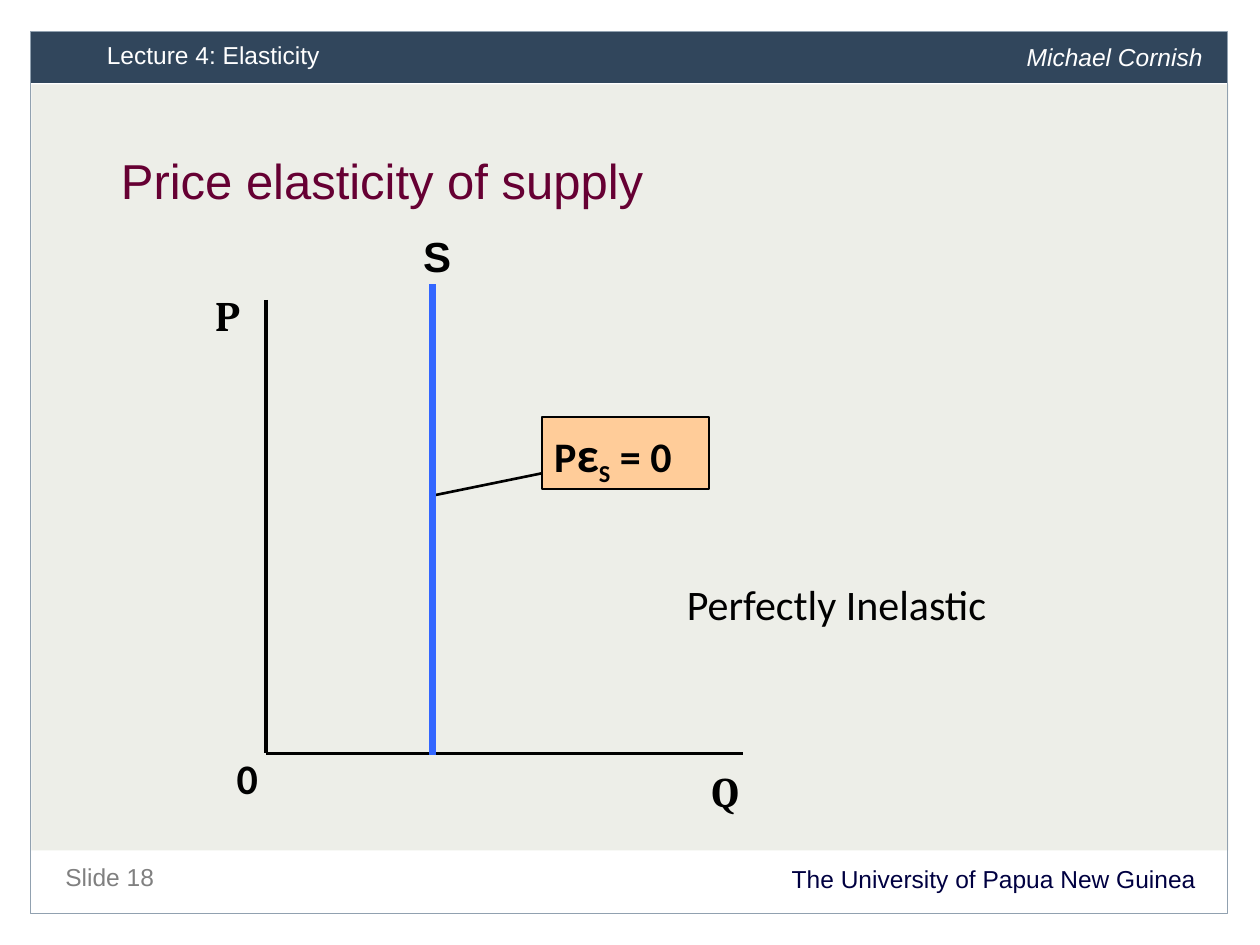
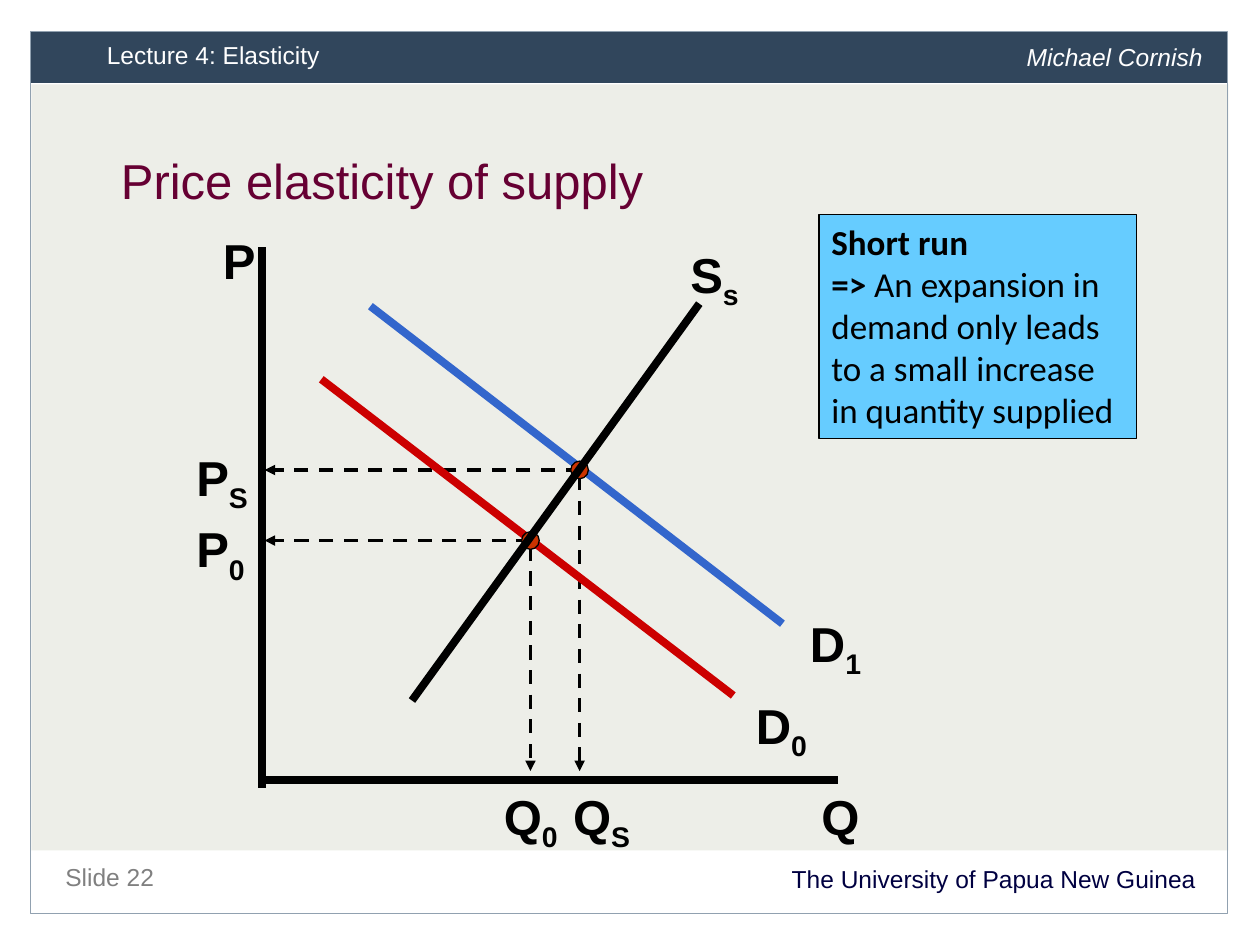
from lxml import etree
from pptx import Presentation
from pptx.dml.color import RGBColor
from pptx.enum.dml import MSO_LINE
from pptx.enum.shapes import MSO_CONNECTOR, MSO_SHAPE
from pptx.enum.text import MSO_ANCHOR, MSO_AUTO_SIZE, PP_ALIGN
from pptx.oxml.ns import qn
from pptx.util import Inches, Pt

BLACK = RGBColor(0x00, 0x00, 0x00)
WHITE = RGBColor(0xFF, 0xFF, 0xFF)
GREY = RGBColor(0x80, 0x80, 0x80)
NAVY = RGBColor(0x00, 0x00, 0x41)
BAND_BLUE = RGBColor(0x31, 0x46, 0x5C)
PANEL = RGBColor(0xED, 0xEE, 0xE8)
FRAME = RGBColor(0x91, 0xA1, 0xB0)
PLUM = RGBColor(0x66, 0x00, 0x33)
PEACH = RGBColor(0xFF, 0xCC, 0x99)
SKY = RGBColor(0x66, 0xCC, 0xFF)
SUPPLY_BLUE = RGBColor(0x33, 0x66, 0xFF)
DEMAND_BLUE = RGBColor(0x33, 0x66, 0xCC)
DEMAND_RED = RGBColor(0xCC, 0x00, 0x00)
DOT_RED = RGBColor(0xCC, 0x33, 0x00)

RECTANGLE = MSO_SHAPE.RECTANGLE
OVAL = MSO_SHAPE.OVAL
STRAIGHT = MSO_CONNECTOR.STRAIGHT
DASH = MSO_LINE.DASH
TOP = MSO_ANCHOR.TOP
LEFT, CENTER, RIGHT = PP_ALIGN.LEFT, PP_ALIGN.CENTER, PP_ALIGN.RIGHT
NO_AUTOFIT = MSO_AUTO_SIZE.NONE

HEADING = "Price elasticity of supply"


def style_run(run, size, font="Arial", color=BLACK, bold=False, italic=False, subscript=False):
    run.font.size = Pt(size)
    run.font.name = font
    run.font.color.rgb = color
    run.font.bold = bold
    run.font.italic = italic
    if subscript:
        run.font._element.set("baseline", "-25000")


class Region:
    def __init__(self, slide, left, top):
        self.shapes = slide.shapes
        self.left = left
        self.top = top

    def box(self, x, y, width, height):
        return [Inches(value) for value in (self.left + x, self.top + y, width, height)]

    def text(self, x, y, width, height, text, size, wrap=True, align=LEFT, spacing=None, **style):
        frame = self.shapes.add_textbox(*self.box(x, y, width, height)).text_frame
        frame.word_wrap = wrap
        frame.text = text
        paragraph = frame.paragraphs[0]
        paragraph.alignment = align
        if spacing:
            paragraph.line_spacing = Pt(spacing)
        style_run(paragraph.runs[0], size, **style)
        return paragraph

    def label(self, x, y, text, subscript="", size=28, **style):
        width = 0.75 if subscript else 0.5
        paragraph = self.text(x, y, width, size / 50, text, size, wrap=False, bold=True, **style)
        if subscript:
            run = paragraph.add_run()
            run.text = subscript
            style_run(run, size, bold=True, subscript=True)

    def shape(self, kind, x, y, width, height, fill=None, line=None, weight=0.75):
        shape = self.shapes.add_shape(kind, *self.box(x, y, width, height))
        shape.shadow.inherit = False
        if fill:
            shape.fill.solid()
            shape.fill.fore_color.rgb = fill
        else:
            shape.fill.background()
        if line:
            shape.line.color.rgb = line
            shape.line.width = Pt(weight)
        else:
            shape.line.fill.background()
        return shape

    def line(self, start, end, color=BLACK, weight=4.5):
        ends = [Inches(value) for x, y in (start, end) for value in (self.left + x, self.top + y)]
        connector = self.shapes.add_connector(STRAIGHT, *ends)
        connector.line.color.rgb = color
        connector.line.width = Pt(weight)
        etree.SubElement(connector.element.spPr, qn("a:effectLst"))
        return connector

    def guide(self, start, end):
        connector = self.line(start, end, weight=2)
        connector.line.dash_style = DASH
        etree.SubElement(connector.line._get_or_add_ln(), qn("a:tailEnd"), type="triangle")

    def note(self, x, y, width, height, fill, paragraphs, weight=0.75):
        frame = self.shape(RECTANGLE, x, y, width, height, fill, BLACK, weight).text_frame
        frame.word_wrap = True
        frame.vertical_anchor = TOP
        for index, runs in enumerate(paragraphs):
            paragraph = frame.add_paragraph() if index else frame.paragraphs[0]
            paragraph.alignment = LEFT
            for text, style in runs:
                run = paragraph.add_run()
                run.text = text
                style_run(run, font="Calibri", **style)


def draw_page(presentation, number):
    slide = presentation.slides.add_slide(presentation.slide_layouts[5])
    page = Region(slide, 0.25, 0.25)
    page.shape(RECTANGLE, 0, 0.42, 9.5, 6.08, PANEL)
    page.shape(RECTANGLE, -0.01, -0.01, 9.5, 0.42, BAND_BLUE, WHITE, 0.5)
    page.text(0.17, 6.58, 9.17, 0.32, "The University of Papua New Guinea", 14,
              align=RIGHT, spacing=15, color=NAVY)
    page.text(0.17, 6.5, 4.33, 0.34, f"Slide {number}", 14, spacing=20, color=GREY)
    page.text(0.5, 0, 6.13, 0.37, "Lecture 4: Elasticity", 14, spacing=18, color=WHITE)
    page.shape(RECTANGLE, -0.01, 0, 9.5, 7, line=FRAME)
    page.text(7.8, 0.02, 1.64, 0.37, "Michael Cornish", 14, spacing=18, color=WHITE, italic=True)
    place_title(slide, page.box(0.61, 1, 8.13, 0.75))
    return slide


def place_title(slide, box):
    title = slide.shapes.title
    title.element.getparent().append(title.element)
    title.left, title.top, title.width, title.height = box
    frame = title.text_frame
    frame.text = HEADING
    frame.auto_size = NO_AUTOFIT
    frame.vertical_anchor = TOP
    paragraph = frame.paragraphs[0]
    paragraph.alignment = LEFT
    paragraph.line_spacing = Pt(26)
    style_run(paragraph.runs[0], 28, color=PLUM)


def draw_inelastic_supply(slide, left, top):
    graph = Region(slide, left, top)
    origin = (0.51, 4.23)
    graph.line((0.51, 0.63), origin, weight=2)
    graph.line(origin, (4.3, 4.23), weight=2)
    graph.label(0.01, 0.5, "P", size=24, font="Cambria")
    graph.label(3.95, 4.28, "Q", size=24, font="Cambria")
    graph.label(1.66, 0.03, "S", size=24)
    graph.label(0.18, 4.17, "0", size=24, font="Calibri")
    graph.line((2.88, 1.97), (1.85, 2.18), weight=1.5)
    bold = {"size": 24, "bold": True}
    graph.note(2.7, 1.56, 1.33, 0.57, PEACH, [[
        ("P", bold),
        ("ε", {"size": 28, "bold": True}),
        ("S", {"size": 24, "bold": True, "subscript": True}),
        (" = 0", bold),
    ]], weight=1)
    graph.line((1.83, 4.24), (1.83, 0.5), SUPPLY_BLUE, 4)
    graph.text(3.74, 2.79, 2.6, 0.5, "Perfectly Inelastic", 24, wrap=False,
               align=CENTER, font="Calibri")


def draw_demand_shift(slide, left, top):
    graph = Region(slide, left, top)
    axis_x, axis_y, dot = 0.63, 4.44, 0.14
    equilibria = [(3.15, 1.98), (2.76, 2.54)]
    for x, y in equilibria:
        graph.guide((x, y), (axis_x + 0.02, y))
        graph.guide((x, y + 0.05), (x, axis_y - 0.07))
    graph.line((1.49, 0.68), (4.76, 3.2), DEMAND_BLUE)
    graph.line((1.1, 1.26), (4.37, 3.77), DEMAND_RED)
    for x, y in equilibria:
        graph.shape(OVAL, x - dot / 2, y - dot / 2, dot, dot, DOT_RED, BLACK)
    graph.line((axis_x + 0.02, axis_y), (5.2, axis_y))
    graph.line((axis_x, 4.5), (axis_x, 0.21))
    graph.line((4.1, 0.66), (1.82, 3.81))
    for x, y, text, subscript in [
        (0.22, 0.03, "P", ""), (0.01, 1.75, "P", "S"), (0.01, 2.32, "P", "0"),
        (4.97, axis_y, "Q", ""), (3, axis_y, "Q", "S"), (2.45, axis_y, "Q", "0"),
        (4.88, 3.07, "D", "1"), (4.45, 3.72, "D", "0"), (3.93, 0.14, "S", "s"),
    ]:
        graph.label(x, y, text, subscript)


def draw_short_run_note(slide, left, top):
    bold = {"size": 20, "bold": True}
    sentence = " An expansion in demand only leads to a small increase in quantity supplied"
    Region(slide, left, top).note(0, 0, 2.52, 1.78, SKY, [
        [("Short run", bold)],
        [("=>", bold), (sentence, {"size": 20})],
    ])


def main():
    presentation = Presentation()
    presentation.slide_width = Inches(10)
    presentation.slide_height = Inches(7.5)
    draw_inelastic_supply(draw_page(presentation, 18), 1.6, 1.75)
    short_run = draw_page(presentation, 22)
    draw_short_run_note(short_run, 6.5, 1.7)
    draw_demand_shift(short_run, 1.45, 1.75)
    presentation.save("out.pptx")


if __name__ == "__main__":
    main()
